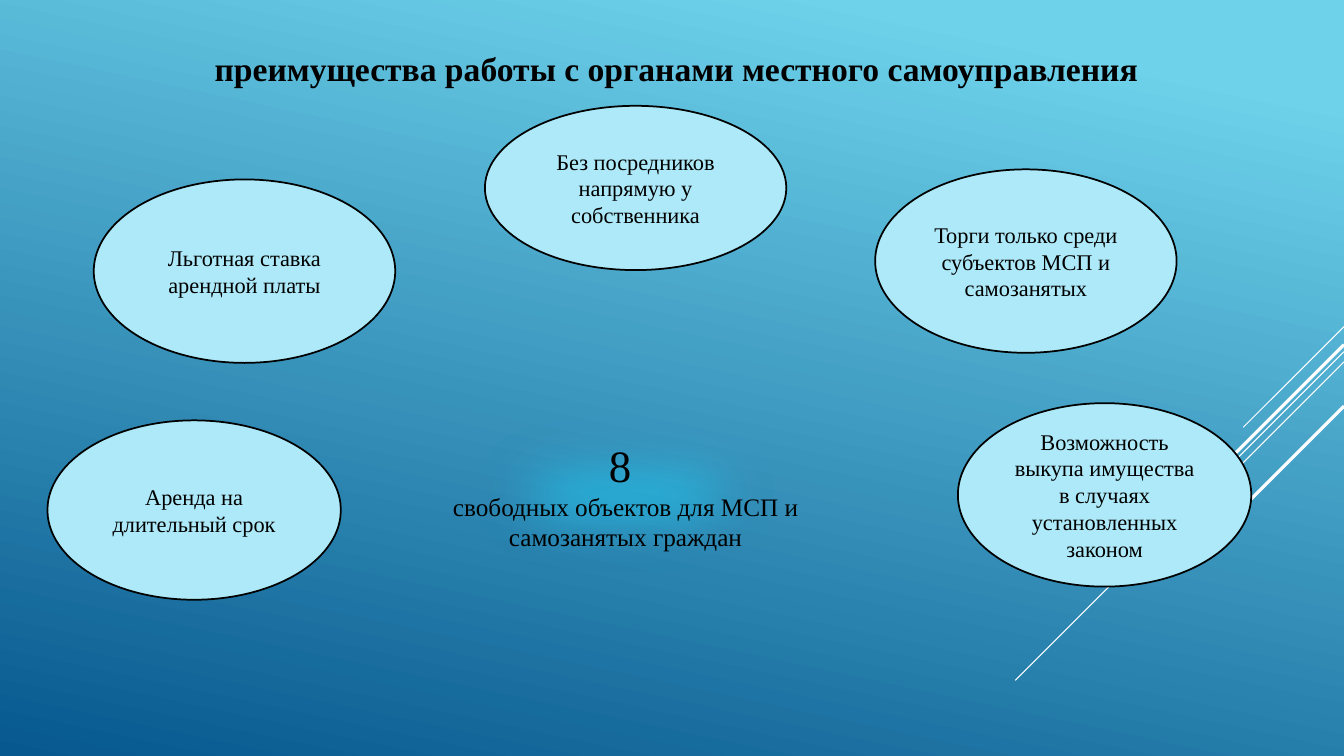
from pptx import Presentation
from pptx.util import Inches, Pt
from pptx.dml.color import RGBColor
from pptx.enum.shapes import MSO_CONNECTOR, MSO_SHAPE
from pptx.enum.text import MSO_ANCHOR, PP_ALIGN
from pptx.oxml.ns import qn
from lxml.etree import SubElement

THEME = {
    "sky": RGBColor(0x6E, 0xD2, 0xEB),
    "deep": RGBColor(0x06, 0x58, 0x8E),
    "bubble": RGBColor(0xAD, 0xE9, 0xF8),
    "glow": RGBColor(0x22, 0xC5, 0xED),
    "ink": RGBColor(0, 0, 0),
    "ray": RGBColor(0xFF, 0xFF, 0xFF),
    "font": "Times New Roman",
    "title": 24, "benefit": 16, "count": 32, "caption": 18,
}

deck = Presentation()
deck.slide_width, deck.slide_height = Inches(13.33), Inches(7.5)
slide = deck.slides.add_slide(deck.slide_layouts[6])


def place(left, top, width, height):
    across, down = deck.slide_width / 100, deck.slide_height / 100
    return [int(n) for n in (left * across, top * down, width * across, height * down)]


def style(paragraph, size, align=PP_ALIGN.CENTER, bold=False):
    paragraph.alignment = align
    for run in paragraph.runs:
        run.font.name = THEME["font"]
        run.font.size = Pt(size)
        run.font.bold = bold
        run.font.color.rgb = THEME["ink"]


backdrop = slide.background.fill
backdrop.gradient()
backdrop.gradient_angle = 360 - 102
for stop, position, shade in zip(backdrop.gradient_stops, (0.1, 1), ("sky", "deep")):
    stop.position = position
    stop.color.rgb = THEME[shade]

RAYS = [
    (43.2, 13.33, 0.75),
    (46.53, 43.47, 0.75),
    (47.87, 27.6, 0.75),
    (45.6, 25.47, 2.25),
    (53.73, 18.53, 2.25),
]
for start, drop, weight in RAYS:
    _, top, _, fall = place(0, start, 0, drop)
    ray = slide.shapes.add_connector(
        MSO_CONNECTOR.STRAIGHT, deck.slide_width, top, deck.slide_width - fall, top + fall)
    ray.line.color.rgb = THEME["ray"]
    ray.line.width = Pt(weight)
    SubElement(ray._element.spPr, qn("a:effectLst"))

BENEFITS = [
    ("Льготная ставка арендной платы", 6.98, 23.73, 22.43, 24.27),
    ("Аренда на длительный срок", 3.53, 55.6, 21.83, 23.73),
    ("Торги только среди субъектов МСП и самозанятых", 65.12, 22.4, 22.43, 24.27),
    ("Возможность выкупа имущества в случаях установленных законом", 71.27, 53.33, 21.83, 24.27),
    ("Без посредников напрямую у собственника", 36.08, 14, 22.43, 21.73),
]
for wording, *area in BENEFITS:
    benefit = slide.shapes.add_shape(MSO_SHAPE.OVAL, *place(*area))
    benefit.shadow.inherit = False
    benefit.fill.solid()
    benefit.fill.fore_color.rgb = THEME["bubble"]
    benefit.line.color.rgb = THEME["ink"]
    benefit.line.width = Pt(1.25)
    benefit.text_frame.text = wording
    benefit.text_frame.vertical_anchor = MSO_ANCHOR.MIDDLE
    style(benefit.text_frame.paragraphs[0], THEME["benefit"])

vacancies = slide.shapes.add_shape(MSO_SHAPE.RECTANGLE, *place(32.41, 51.6, 28.28, 27.6))
vacancies.shadow.inherit = False
vacancies.fill.solid()
vacancies.fill.fore_color.rgb = THEME["glow"]
vacancies.line.fill.background()
effects = vacancies._element.spPr.find(qn("a:effectLst"))
SubElement(effects, qn("a:softEdge")).set("rad", str(Pt(50)))
vacancies.text_frame.text = "8 \nсвободных объектов для МСП и самозанятых граждан"
vacancies.text_frame.vertical_anchor = MSO_ANCHOR.MIDDLE
for paragraph, part in zip(vacancies.text_frame.paragraphs, ("count", "caption")):
    style(paragraph, THEME[part])

title = slide.shapes.add_textbox(*place(15.23, 5.73, 71.34, 6.67))
title.text_frame.word_wrap = True
title.text_frame.text = "преимущества работы с органами местного самоуправления"
style(title.text_frame.paragraphs[0], THEME["title"], PP_ALIGN.LEFT, True)

deck.save("out.pptx")
